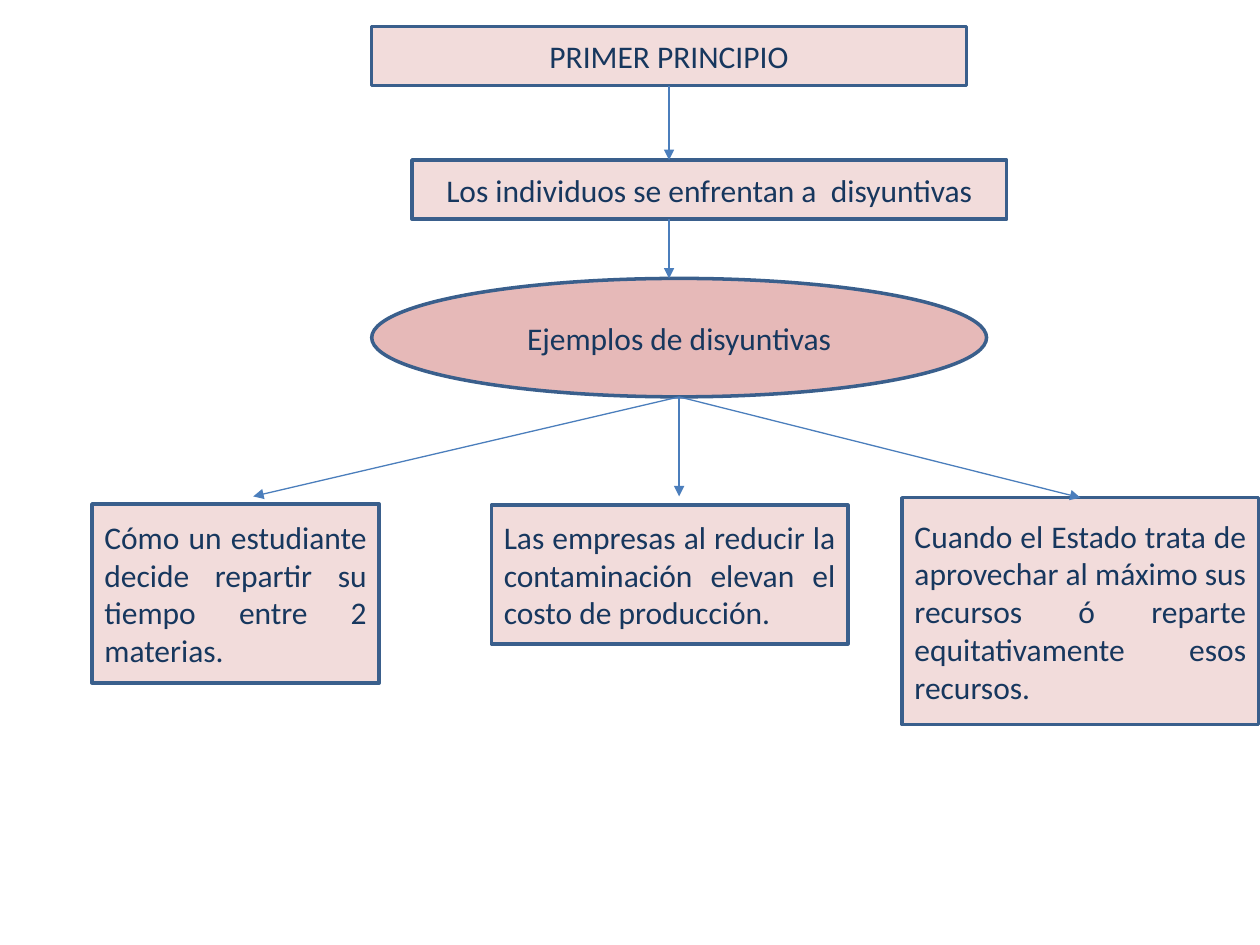
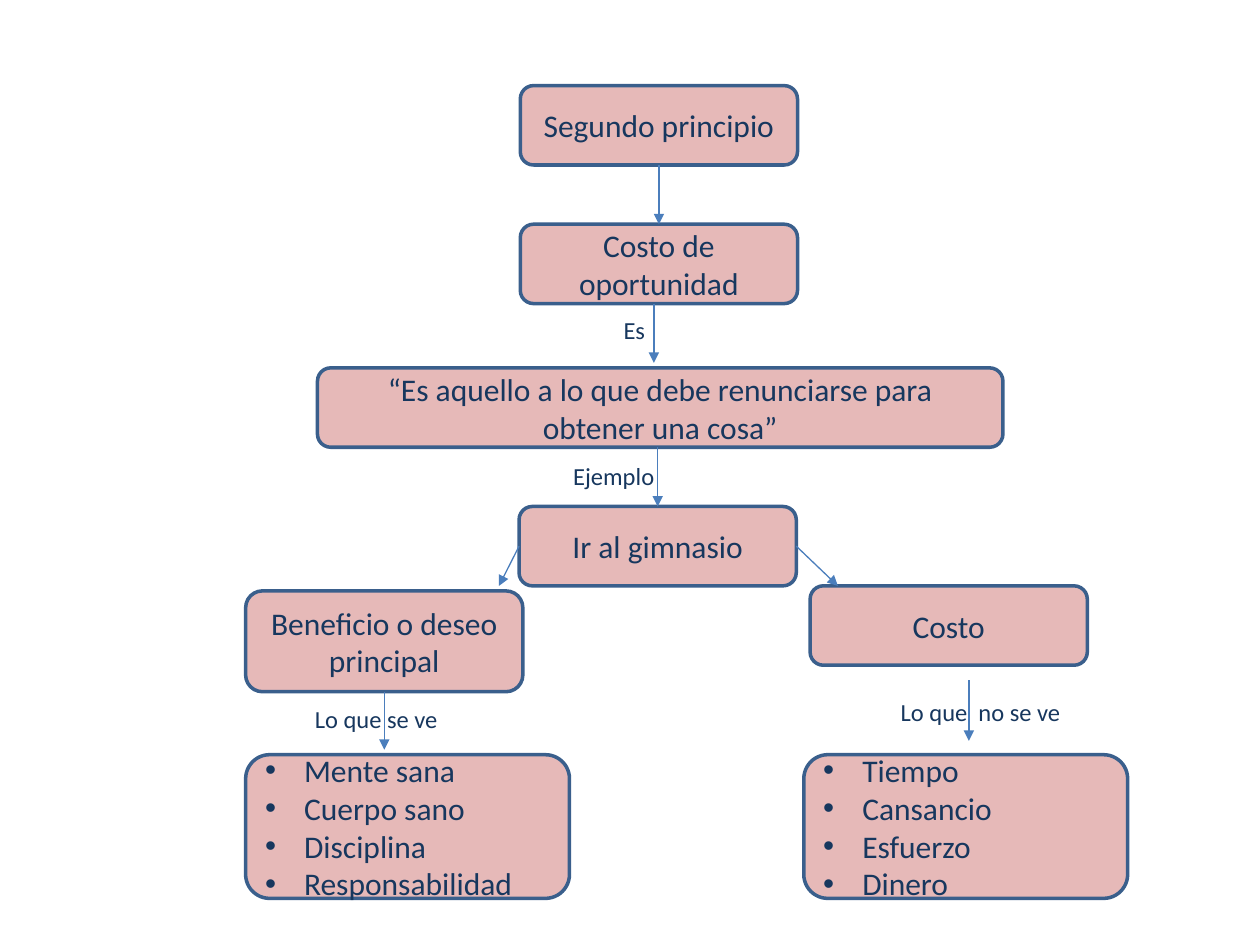
from dataclasses import dataclass
from typing import NamedTuple, Union

from lxml import etree
from pptx import Presentation
from pptx.dml.color import RGBColor
from pptx.enum import shapes, text
from pptx.oxml import ns
from pptx.util import Inches, Pt

FONT = "Calibri"
INK, BORDER, ARROW = "17375E", "3A5F8C", "4B7EBC"
PALE, ROSE = "F2DCDB", "E6B9B8"

RECT = shapes.MSO_SHAPE.RECTANGLE
ROUND = shapes.MSO_SHAPE.ROUNDED_RECTANGLE
OVAL = shapes.MSO_SHAPE.OVAL
LEFT, CENTER, JUSTIFY = text.PP_ALIGN.LEFT, text.PP_ALIGN.CENTER, text.PP_ALIGN.JUSTIFY
TOP, LEFT_SIDE, BOTTOM, RIGHT_SIDE = range(4)


class Point(NamedTuple):
    x: float
    y: float


class Side(NamedTuple):
    """The middle of one side of a named box."""
    box: str
    site: int


End = Union[Point, Side]


@dataclass
class Box:
    key: str
    wording: str
    left: float
    top: float
    width: float
    height: float
    shape: shapes.MSO_SHAPE = ROUND
    fill: str = ROSE
    align: text.PP_ALIGN = CENTER
    bulleted: bool = False


class Label(NamedTuple):
    wording: str
    left: float
    top: float


class Arrow(NamedTuple):
    start: End
    end: End


def rgb(value: str) -> RGBColor:
    return RGBColor.from_string(value)


def write(tf, wording: str, size: int, align, bulleted: bool = False) -> None:
    tf.word_wrap = True
    tf.text = wording
    for p in tf.paragraphs:
        p.alignment = align
        if bulleted:
            add_bullet(p)
        for r in p.runs:
            r.font.name = FONT
            r.font.size = Pt(size)
            r.font.color.rgb = rgb(INK)


def add_bullet(p) -> None:
    pPr = p._p.get_or_add_pPr()
    indent = Inches(0.31)
    pPr.set("marL", str(indent))
    pPr.set("indent", str(-indent))
    etree.SubElement(pPr, ns.qn("a:buFont")).set("typeface", "Arial")
    etree.SubElement(pPr, ns.qn("a:buChar")).set("char", "•")


def draw_box(s, box: Box):
    sp = s.shapes.add_shape(box.shape, Inches(box.left), Inches(box.top),
                            Inches(box.width), Inches(box.height))
    sp.shadow.inherit = False
    sp.fill.solid()
    sp.fill.fore_color.rgb = rgb(box.fill)
    sp.line.color.rgb = rgb(BORDER)
    sp.line.width = Pt(2)
    sp.text_frame.vertical_anchor = text.MSO_ANCHOR.MIDDLE
    write(sp.text_frame, box.wording, 18, box.align, box.bulleted)
    return sp


def draw_label(s, label: Label) -> None:
    sp = s.shapes.add_textbox(Inches(label.left), Inches(label.top),
                              Inches(1.48), Inches(0.34))
    write(sp.text_frame, label.wording, 14, LEFT)


def draw_arrow(s, arrow: Arrow, drawn: dict) -> None:
    xy = [Inches(n) for end in arrow
          for n in (end if isinstance(end, Point) else (0, 0))]
    line = s.shapes.add_connector(shapes.MSO_CONNECTOR.STRAIGHT, *xy)
    for end, connect in zip(arrow, (line.begin_connect, line.end_connect)):
        if isinstance(end, Side):
            connect(drawn[end.box], end.site)
    line.line.color.rgb = rgb(ARROW)
    line.line.width = Pt(0.75)
    etree.SubElement(line.line._get_or_add_ln(), ns.qn("a:tailEnd")).set("type", "triangle")
    etree.SubElement(line._element.spPr, ns.qn("a:effectLst"))


def draw_map(prs, boxes: list[Box], arrows: list[Arrow], labels: list[Label]) -> None:
    s = prs.slides.add_slide(prs.slide_layouts[6])
    drawn = {box.key: draw_box(s, box) for box in boxes}
    for arrow in arrows:
        draw_arrow(s, arrow, drawn)
    for label in labels:
        draw_label(s, label)


def heading(key: str, wording: str, left: float, top: float) -> Box:
    return Box(key, wording, left, top, 4.72, 0.47, RECT, PALE)


def example(key: str, wording: str, left: float, top: float,
            width: float, height: float) -> Box:
    return Box(key, wording, left, top, width, height, RECT, PALE, JUSTIFY)


def step(key: str, wording: str, left: float, top: float,
         width: float = 2.2, height: float = 0.63) -> Box:
    return Box(key, wording, left, top, width, height)


def bullet_box(key: str, items: list[str], left: float) -> Box:
    return Box(key, "\n".join(items), left, 5.99, 2.57, 1.14, align=LEFT, bulleted=True)


def first_principle(prs) -> None:
    boxes = [
        heading("Principio", "PRIMER PRINCIPIO", 2.95, 0.21),
        heading("Disyuntivas", "Los individuos se enfrentan a  disyuntivas", 3.27, 1.27),
        example("Empresas", "Las empresas al reducir la contaminación elevan el costo "
                "de producción.", 3.9, 4.01, 2.83, 1.1),
        example("Estado", "Cuando el Estado trata de aprovechar al máximo sus recursos "
                "ó reparte equitativamente esos recursos.", 7.16, 3.95, 2.83, 1.8),
        Box("Ejemplos", "Ejemplos de disyuntivas", 2.95, 2.21, 4.88, 0.94, OVAL),
        example("Estudiante", "Cómo un estudiante decide repartir su tiempo entre "
                "2 materias.", 0.73, 4, 2.28, 1.42),
    ]
    fork = Point(5.39, 3.15)
    arrows = [
        Arrow(Side("Principio", BOTTOM), Point(5.31, 1.27)),
        Arrow(Point(5.31, 1.74), Point(5.31, 2.21)),
        Arrow(fork, Point(5.39, 3.94)),
        Arrow(fork, Point(2.01, 3.94)),
        Arrow(fork, Side("Estado", TOP)),
    ]
    draw_map(prs, boxes, arrows, [])


def second_principle(prs) -> None:
    boxes = [
        step("Principio", "Segundo principio", 4.13, 0.68),
        step("Oportunidad", "Costo de oportunidad", 4.13, 1.78),
        step("Definición", "“Es aquello a lo que debe renunciarse para obtener una cosa”",
             2.52, 2.92, width=5.44),
        step("Gimnasio", "Ir al gimnasio", 4.12, 4.02),
        step("Beneficio", "Beneficio o deseo principal", 1.95, 4.69, height=0.8),
        step("Costo", "Costo", 6.43, 4.65),
        bullet_box("Beneficios", ["Mente sana", "Cuerpo sano", "Disciplina",
                                  "Responsabilidad"], 1.95),
        bullet_box("Costos", ["Tiempo", "Cansancio", "Esfuerzo", "Dinero"], 6.38),
    ]
    arrows = [
        Arrow(Side("Principio", BOTTOM), Side("Oportunidad", TOP)),
        Arrow(Point(5.19, 2.41), Point(5.19, 2.88)),
        Arrow(Point(5.22, 3.55), Side("Gimnasio", TOP)),
        Arrow(Side("Beneficio", BOTTOM), Point(3.05, 5.95)),
        Arrow(Point(7.69, 5.4), Point(7.69, 5.88)),
        Arrow(Side("Gimnasio", LEFT_SIDE), Point(3.96, 4.65)),
        Arrow(Side("Gimnasio", RIGHT_SIDE), Point(6.65, 4.65)),
    ]
    labels = [
        Label("Lo que se ve", 2.4, 5.54),
        Label("Lo que  no se ve", 7.05, 5.48),
        Label("Es", 4.85, 2.45),
        Label("Ejemplo", 4.45, 3.61),
    ]
    draw_map(prs, boxes, arrows, labels)


def main() -> None:
    prs = Presentation()
    prs.slide_width, prs.slide_height = Inches(10), Inches(7.5)
    first_principle(prs)
    second_principle(prs)
    prs.save("out.pptx")


if __name__ == "__main__":
    main()
